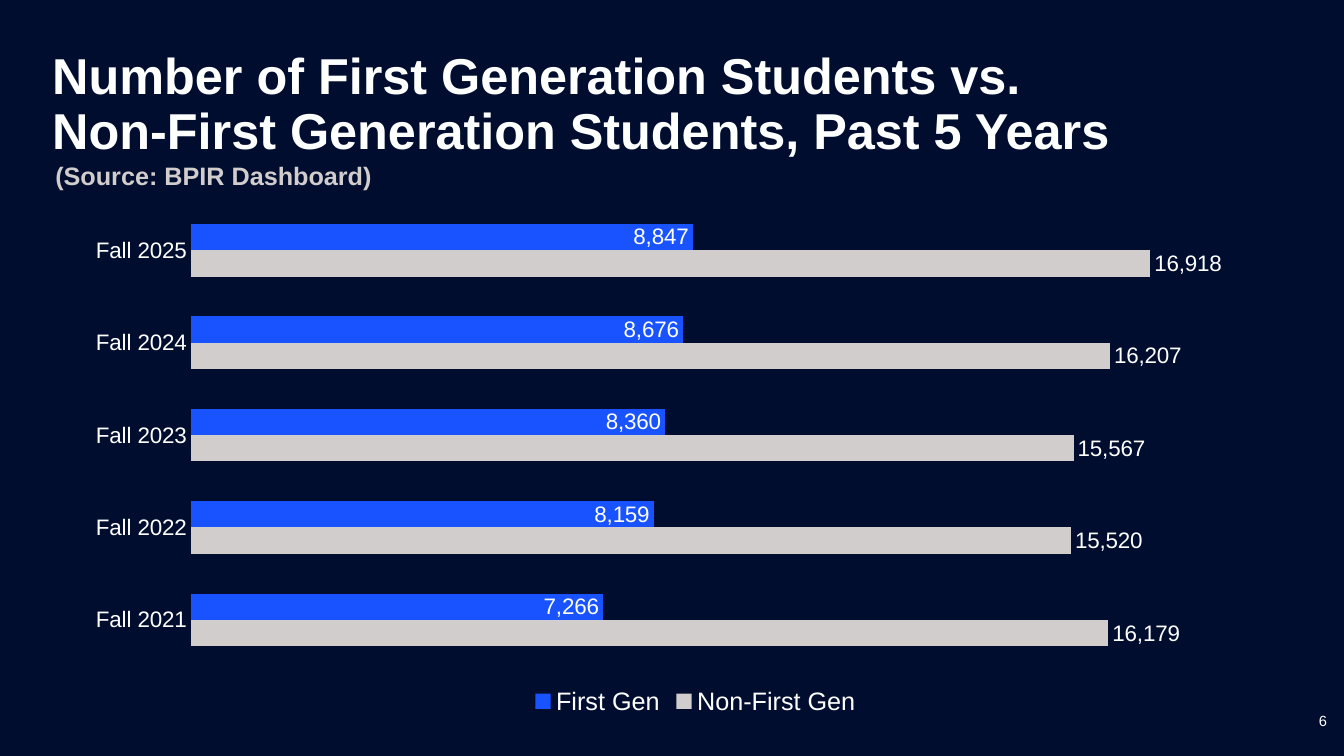
"""Build the slide comparing first generation and non-first generation student numbers."""
import lxml.etree
import pptx
import pptx.chart.data
import pptx.dml.color
import pptx.enum.chart
import pptx.enum.text
import pptx.oxml.ns
import pptx.util

Inches = pptx.util.Inches
Pt = pptx.util.Pt
NAVY = pptx.dml.color.RGBColor(0x00, 0x0D, 0x2F)
WHITE = pptx.dml.color.RGBColor(0xFE, 0xFF, 0xFF)
GRAY = pptx.dml.color.RGBColor(0xD1, 0xCD, 0xCD)
BLUE = pptx.dml.color.RGBColor(0x18, 0x53, 0xFF)


def style_font(font, size, color, bold=False):
    font.name = "Arial"
    font.size = Pt(size)
    font.bold = bold
    font.color.rgb = color


def make_layout(**settings):
    qn = pptx.oxml.ns.qn
    layout = pptx.oxml.parse_xml(
        '<c:layout xmlns:c="http://schemas.openxmlformats.org/drawingml/2006/chart"/>'
    )
    manual = lxml.etree.SubElement(layout, qn("c:manualLayout"))
    for name, value in settings.items():
        lxml.etree.SubElement(manual, qn(f"c:{name}")).set("val", str(value))
    return layout


presentation = pptx.Presentation()
presentation.slide_width = Inches(13.33)
presentation.slide_height = Inches(7.5)
slide = presentation.slides.add_slide(presentation.slide_layouts[6])
slide.background.fill.solid()
slide.background.fill.fore_color.rgb = NAVY

data = pptx.chart.data.CategoryChartData(number_format="#,##0")
data.categories = [f"Fall {year}" for year in range(2021, 2026)]
data.add_series("Non-First Gen", (16179, 15520, 15567, 16207, 16918))
data.add_series("First Gen", (7266, 8159, 8360, 8676, 8847))
chart = slide.shapes.add_chart(
    pptx.enum.chart.XL_CHART_TYPE.BAR_CLUSTERED,
    Inches(0.74), Inches(1.92), Inches(11.51), Inches(5.24), data,
).chart
style_font(chart.font, 16, WHITE)
chart.has_title = False

category_axis = chart.category_axis
category_axis.major_tick_mark = pptx.enum.chart.XL_TICK_MARK.NONE
category_axis.format.line.fill.background()
style_font(category_axis.tick_labels.font, 16, WHITE)
value_axis = chart.value_axis
value_axis.minimum_scale = 0
value_axis.maximum_scale = 18000
value_axis.has_major_gridlines = False
value_axis.visible = False

plot = chart.plots[0]
plot.gap_width = 150
plot.overlap = 0
plot.vary_by_categories = False
label_position = pptx.enum.chart.XL_LABEL_POSITION
series_styles = ((GRAY, label_position.OUTSIDE_END), (BLUE, label_position.INSIDE_END))
for series, (color, position) in zip(plot.series, series_styles):
    series.format.fill.solid()
    series.format.fill.fore_color.rgb = color
    labels = series.data_labels
    labels.show_value = True
    labels.number_format = "#,##0"
    labels.number_format_is_linked = False
    labels.position = position
    style_font(labels.font, 16, WHITE)

chart.has_legend = True
chart.legend.position = pptx.enum.chart.XL_LEGEND_POSITION.BOTTOM
chart.legend.include_in_layout = False
style_font(chart.legend.font, 18, WHITE)
legend_position = chart.element.xpath("c:chart/c:legend/c:legendPos")[0]
for old_layout in chart.element.xpath("c:chart/c:legend/c:layout | c:chart/c:plotArea/c:layout"):
    old_layout.getparent().remove(old_layout)
legend_position.addnext(make_layout(xMode="edge", yMode="edge", x=0.39, y=0.93))
plot_area = chart.element.xpath("c:chart/c:plotArea")[0]
plot_area.insert(0, make_layout(
    layoutTarget="inner", xMode="edge", yMode="edge", x=0.1, y=0.02, w=0.88, h=0.875,
))

alignment = pptx.enum.text.PP_ALIGN
anchor = pptx.enum.text.MSO_ANCHOR
title_lines = (
    "Number of First Generation Students vs.",
    "Non-First Generation Students, Past 5 Years",
)
text_boxes = (
    (title_lines, (0.42, 0.18, 12.47, 1.74), 36, WHITE, True, alignment.LEFT, anchor.MIDDLE, 0.9),
    (("6",), (10.26, 6.95, 3, 0.4), 10.5, WHITE, False, alignment.RIGHT, anchor.MIDDLE, 1.0),
    (("(Source: BPIR Dashboard)",), (0.45, 1.54, 8.21, 0.4), 18, GRAY, True,
     alignment.LEFT, anchor.TOP, 1.0),
)
for lines, place, size, color, bold, align, vertical, spacing in text_boxes:
    shape = slide.shapes.add_textbox(*map(Inches, place))
    shape.text_frame.word_wrap = True
    shape.text_frame.vertical_anchor = vertical
    paragraph = shape.text_frame.paragraphs[0]
    paragraph.alignment = align
    paragraph.line_spacing = spacing
    for index, line in enumerate(lines):
        if index:
            paragraph.add_line_break()
        run = paragraph.add_run()
        run.text = line
        style_font(run.font, size, color, bold)

presentation.save("out.pptx")
